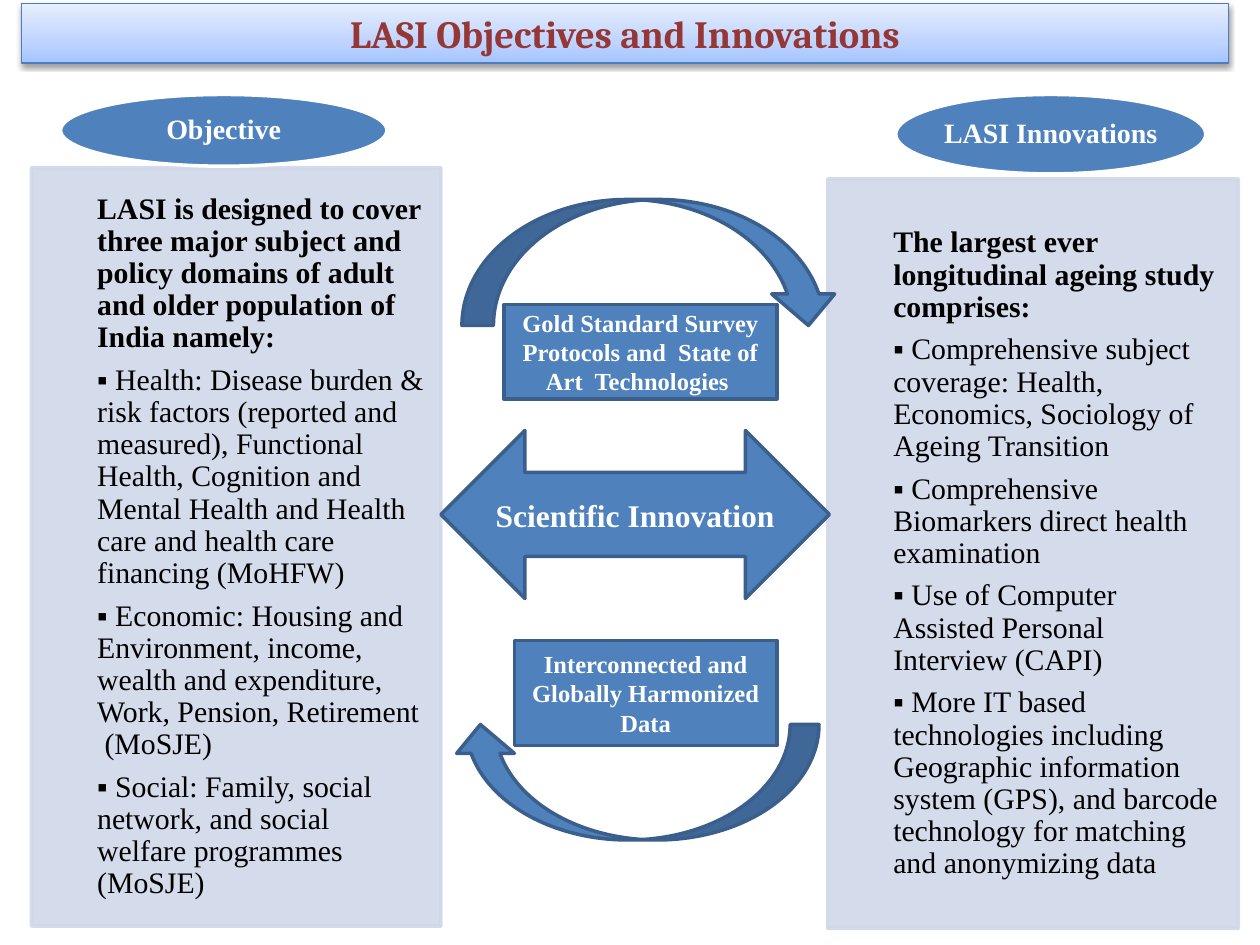
from lxml.etree import SubElement
from pptx import Presentation
from pptx.dml.color import RGBColor
from pptx.enum.shapes import MSO_SHAPE
from pptx.enum.text import MSO_ANCHOR, MSO_AUTO_SIZE, PP_ALIGN
from pptx.oxml import parse_xml
from pptx.oxml.ns import nsdecls, qn
from pptx.util import Pt

COLORS = {"blue": "4F81BD", "edge": "3A5F8C", "panel": "D0D8E8", "white": "FFFFFF",
          "black": "000000", "title": "953735", "title_edge": "4B7EBC"}
TITLE_STOPS = [(0, "A4C4FF"), (35, "BFD4FF"), (100, "E6EEFF")]
SERIF = "Times New Roman"

# Content: boxes are left, top, width, height in points
TITLE = ("LASI Objectives and Innovations", (12.25, 2.15, 689.75, 33.85))
COLUMNS = [
    {"head": "Objective", "oval": (34.6, 54, 186.5, 41), "panel": (18, 95.8, 234, 433.4),
     "text": [
         "LASI is designed to cover three major subject and policy domains of adult and "
         "older population of India namely:",
         "▪ Health: Disease burden & risk factors (reported and measured), Functional Health, "
         "Cognition and Mental Health and Health care and health care financing (MoHFW)",
         "▪ Economic: Housing and Environment, income, wealth and expenditure, Work, Pension, "
         "Retirement  (MoSJE)",
         "▪ Social: Family, social network, and social welfare programmes (MoSJE)"]},
    {"head": "LASI Innovations", "oval": (511.9, 54, 177.1, 45.4),
     "panel": (473, 102.2, 234.7, 428.4),
     "text": [
         "The largest ever longitudinal ageing study comprises:",
         "▪ Comprehensive subject coverage: Health, Economics, Sociology of Ageing Transition",
         "▪ Comprehensive Biomarkers direct health examination",
         "▪ Use of Computer Assisted Personal Interview (CAPI)",
         "▪ More IT based technologies including Geographic information system (GPS), and "
         "barcode technology for matching and anonymizing data"]},
]
# Middle: shape, box, rotation, text, text size
MIDDLE = [
    (MSO_SHAPE.LEFT_RIGHT_ARROW, (252, 246, 222, 96), 0, "Scientific Innovation", 18),
    (MSO_SHAPE.CURVED_DOWN_ARROW, (264, 114, 216, 72), 0, "", 0),
    (MSO_SHAPE.CURVED_DOWN_ARROW, (258, 414, 210, 66), 180, "", 0),
    (MSO_SHAPE.RECTANGLE, (288, 174, 156, 54), 0,
     "Gold Standard Survey Protocols and  State of Art  Technologies ", 14),
    (MSO_SHAPE.RECTANGLE, (294, 366, 150, 60), 0,
     "Interconnected and Globally Harmonized Data", 14),
]


def rgb(name):
    return RGBColor.from_string(COLORS[name])


def add_shape(s, kind, box, fill, line, width=2):
    sp = s.shapes.add_shape(kind, *map(Pt, box))
    sp.shadow.inherit = False
    sp.fill.solid()
    sp.fill.fore_color.rgb = rgb(fill)
    sp.line.color.rgb = rgb(line)
    sp.line.width = Pt(width)
    return sp


def write(sp, texts, size, color="white", font=SERIF, bold=lambda i: True,
          anchor=MSO_ANCHOR.MIDDLE, insets=None, **para):
    tf = sp.text_frame
    tf.word_wrap = True
    tf.vertical_anchor = anchor
    for side, value in (insets or {}).items():
        setattr(tf, f"margin_{side}", Pt(value))
    for i, text in enumerate(texts):
        p = tf.paragraphs[0] if i == 0 else tf.add_paragraph()
        for key, value in {"alignment": PP_ALIGN.CENTER, **para}.items():
            setattr(p, key, value)
        r = p.add_run()
        r.text = text
        for key, value in {"name": font, "size": Pt(size), "bold": bold(i)}.items():
            setattr(r.font, key, value)
        r.font.color.rgb = rgb(color)


prs = Presentation()
prs.slide_width, prs.slide_height = Pt(720), Pt(540)
s = prs.slides.add_slide(prs.slide_layouts[6])

# Side columns: translucent panel with an oval heading
for col in COLUMNS:
    sp = add_shape(s, MSO_SHAPE.RECTANGLE, col["panel"], "panel", "panel")
    for clr in sp._element.spPr.iter(qn("a:srgbClr")):
        SubElement(clr, qn("a:alpha"), val="90000")
    write(sp, col["text"], 17, "black", bold=lambda i: i == 0,
          insets={"left": 37.5, "top": 9.4, "right": 9.4, "bottom": 9.4},
          alignment=PP_ALIGN.LEFT, line_spacing=0.9, space_after=Pt(6))
    sp = add_shape(s, MSO_SHAPE.OVAL, col["oval"], "blue", "white")
    write(sp, [col["head"]], 16, line_spacing=0.9,
          insets=dict.fromkeys(("left", "top", "right", "bottom"), 0))

# Title bar with gradient and soft shadow
text, box = TITLE
sp = add_shape(s, MSO_SHAPE.RECTANGLE, box, "white", "title_edge", 0.75)
write(sp, [text], 22, "title", "Cambria", anchor=MSO_ANCHOR.TOP)
sp.text_frame.auto_size = MSO_AUTO_SIZE.SHAPE_TO_FIT_TEXT
spPr = sp._element.spPr
stops = "".join(f'<a:gs pos="{pos * 1000}"><a:srgbClr val="{c}"/></a:gs>'
                for pos, c in TITLE_STOPS)
spPr.replace(spPr.find(qn("a:solidFill")), parse_xml(
    f'<a:gradFill {nsdecls("a")} rotWithShape="1"><a:gsLst>{stops}</a:gsLst>'
    '<a:lin ang="16200000" scaled="1"/></a:gradFill>'))
shadow = SubElement(spPr.find(qn("a:effectLst")), qn("a:outerShdw"), rotWithShape="0",
                    blurRad=str(Pt(3.1)), dist=str(Pt(1.6)), dir="5400000")
clr = SubElement(shadow, qn("a:srgbClr"), val=COLORS["black"])
SubElement(clr, qn("a:alpha"), val="38000")

# Arrows and boxes between the columns
for kind, box, rotation, text, size in MIDDLE:
    sp = add_shape(s, kind, box, "blue", "edge")
    sp.rotation = rotation
    if text:
        write(sp, [text], size)

prs.save("out.pptx")
